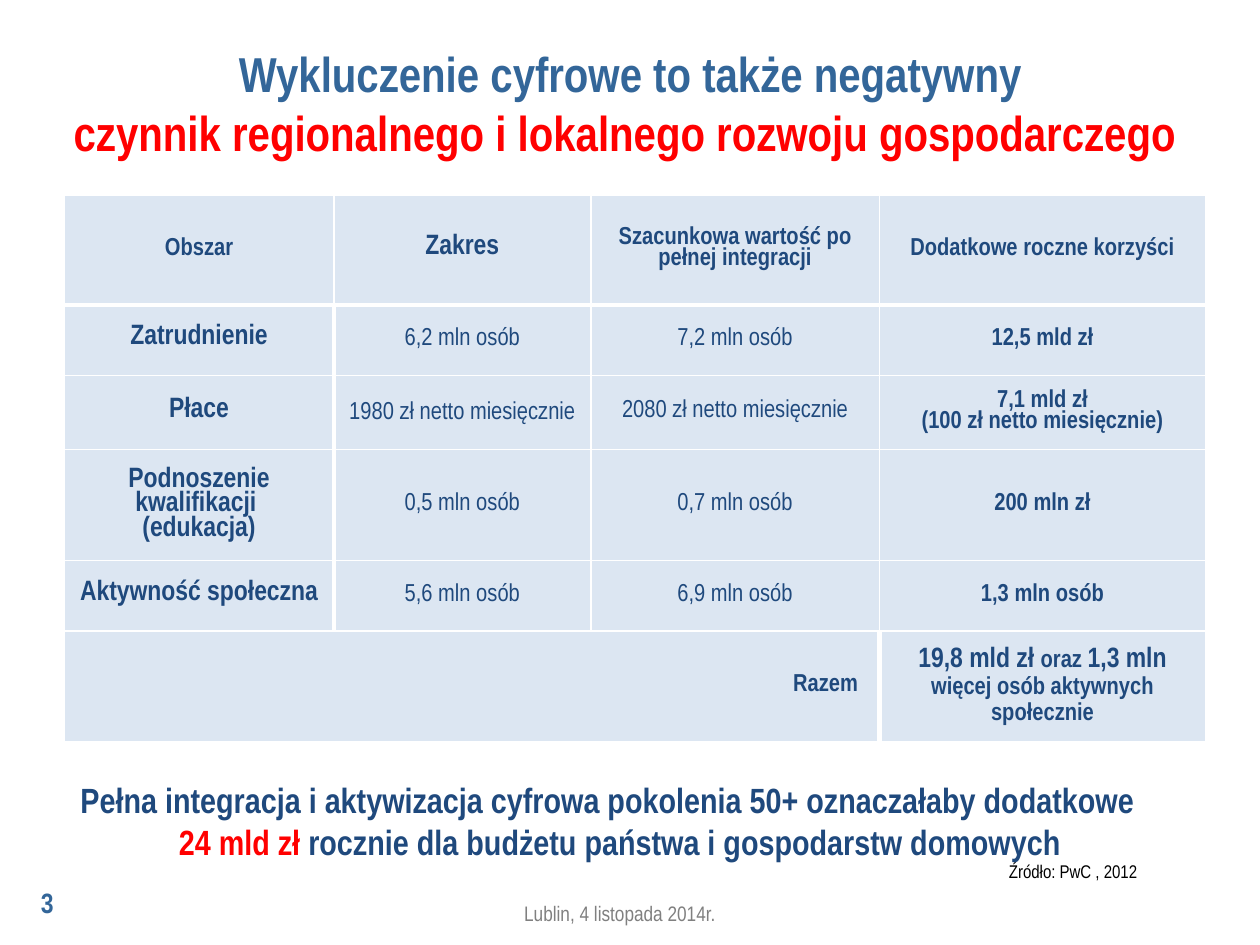
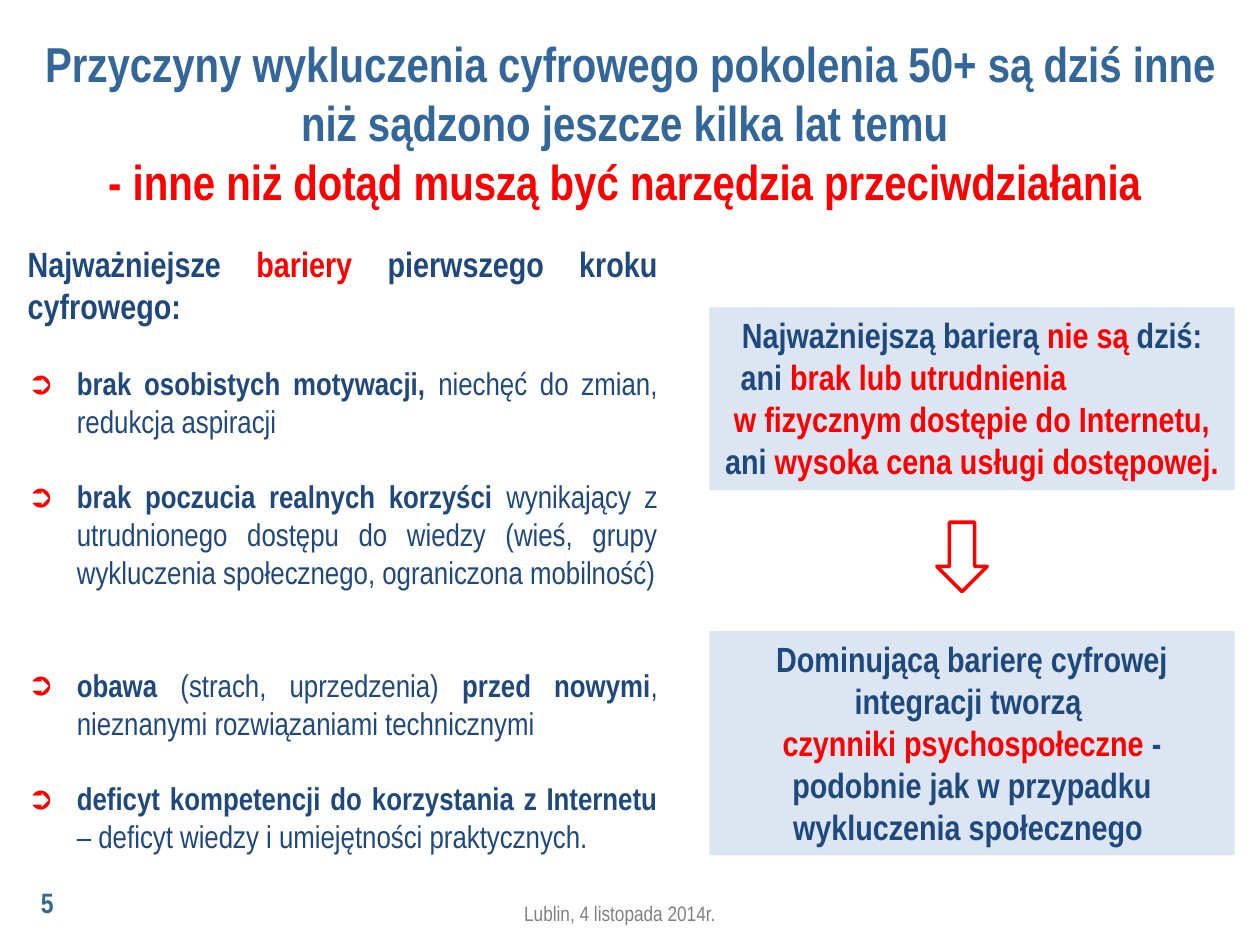
from dataclasses import dataclass
from lxml.etree import SubElement as Sub
from pptx import Presentation
from pptx.dml.color import RGBColor as Rgb
from pptx.enum.shapes import MSO_SHAPE as Shape
from pptx.enum.text import MSO_ANCHOR as Anchor, MSO_AUTO_SIZE as Auto, PP_ALIGN as Align
from pptx.oxml.ns import qn
from pptx.util import Pt

SCALE = 9144


@dataclass(frozen=True)
class Theme:
    """Colours, font and type sizes."""
    face: str = "Arial Narrow"
    blue: str = "336699"
    navy: str = "1F497D"
    red: str = "FF0000"
    pale: str = "DCE6F2"
    grey: str = "808080"
    black: str = "000000"
    white: str = "FFFFFF"
    title: float = 28
    lead: float = 20
    body: float = 18
    mark: float = 16
    cell: float = 14
    foot: float = 12
    note: float = 10.5


T = Theme()
RED = {"color": T.red}
BIG = {"size": T.mark}
THIN = {"bold": False}


def px(*vals):
    """Turn px into EMU."""
    return [val * SCALE for val in vals]


def put(obj, vals):
    """Set attributes from a dict."""
    for key, val in vals.items():
        setattr(obj, key, val)


def para(*runs, **look):
    """Pair runs with a paragraph look."""
    return runs, look


class Deck:
    """Style and current slide."""

    def __init__(self):
        """Start an empty deck."""
        self.prs = Presentation()
        self.prs.slide_width, self.prs.slide_height = px(1000, 750)
        self.slide = None

    def page(self, num, layout, top, *runs):
        """Add a slide with title, number and footer."""
        self.slide = self.prs.slides.add_slide(self.prs.slide_layouts[layout])
        self.hold(self.slide.shapes.title, (0, top, 1000, 84), [para(*runs)],
                  size=T.title, color=T.blue, bold=True)
        self.text((130, 710, 724, 30), [para("Lublin, 4 listopada 2014r.")],
                  size=T.foot, color=T.grey)
        self.text((0, 682, 75, 68), [para(num)], Anchor.MIDDLE,
                  size=T.mark, color=T.blue, bold=True)

    def style(self, font, size, color, bold=False):
        """Format one font."""
        put(font, {"name": T.face, "size": Pt(size), "bold": bold})
        font.color.rgb = Rgb.from_string(color)

    def lines(self, frame, paras, **base):
        """Set paragraphs of styled runs."""
        for num, (runs, look) in enumerate(paras):
            line = frame.add_paragraph() if num else frame.paragraphs[0]
            look = {"alignment": Align.CENTER, "space_before": Pt(0)} | look
            mark, left = look.pop("mark", None), look.pop("left", 0)
            put(line, look)
            self.lead(line, left, mark)
            for run in runs:
                words, own = (run, {}) if isinstance(run, str) else run
                for part, bit in enumerate(words.split("\n")):
                    if part:
                        line.add_line_break()
                    if bit:
                        piece = line.add_run()
                        piece.text = bit
                        self.style(piece.font, **(base | own))

    def lead(self, line, left, mark):
        """Set indent and bullet."""
        props = line._p.get_or_add_pPr()
        edge = px(left)[0]
        props.set("marL", str(edge))
        props.set("indent", str(-edge if mark else 0))
        if mark:
            Sub(Sub(props, qn("a:buClr")), qn("a:srgbClr"), val=T.red)
            Sub(props, qn("a:buChar"), char=mark)
        else:
            Sub(props, qn("a:buNone"))

    def hold(self, shape, area, paras, **base):
        """Move and fill a placeholder."""
        put(shape, dict(zip(("left", "top", "width", "height"), px(*area))))
        put(shape.text_frame, {"auto_size": Auto.NONE, "word_wrap": True,
                               "vertical_anchor": Anchor.MIDDLE})
        self.lines(shape.text_frame, paras, **base)

    def list(self, area, paras, **base):
        """Fill the body placeholder."""
        self.hold(self.slide.placeholders[1], area, paras, **base)

    def text(self, area, paras, anchor=Anchor.TOP, wrap=True, **base):
        """Add a text box."""
        frame = self.slide.shapes.add_textbox(*px(*area)).text_frame
        put(frame, {"word_wrap": wrap, "vertical_anchor": anchor})
        self.lines(frame, paras, **base)

    def shape(self, kind, area, fill, line=None):
        """Add a flat preset shape."""
        item = self.slide.shapes.add_shape(kind, *px(*area))
        item.shadow.inherit = False
        item.fill.solid()
        item.fill.fore_color.rgb = Rgb.from_string(fill)
        if line:
            item.line.color.rgb = Rgb.from_string(line)
            item.line.width = Pt(2)
        else:
            item.line.fill.background()
        return item

    def panel(self, area, paras):
        """Add a pale panel with bold text."""
        frame = self.shape(Shape.RECTANGLE, area, T.pale).text_frame
        put(frame, {"word_wrap": True, "vertical_anchor": Anchor.TOP})
        self.lines(frame, paras, size=T.lead, color=T.navy, bold=True)

    def table(self, area, cols, rows, data):
        """Add a table whose last row sums up the rest."""
        grid = self.slide.shapes.add_table(len(rows), len(cols), *px(*area)).table
        put(grid, {"first_row": False, "horz_banding": False})
        for col, wide in zip(grid.columns, px(*cols)):
            col.width = wide
        for row, high in zip(grid.rows, px(*rows)):
            row.height = high
        last, end = len(rows) - 1, len(cols) - 1
        grid.cell(last, 0).merge(grid.cell(last, end - 1))
        for r, line in enumerate(data):
            split = end if r == last else 1
            for c, paras in enumerate(line):
                cell = grid.cell(r, c)
                thick = {"L": r and c == split, "R": r and c in (0, split - 1),
                         "T": r == 1, "B": r == 0}
                self.cell(cell, paras, thick, not r or c in (0, end) or r == last)
        grid.cell(last, 0).margin_right = px(17)[0]

    def cell(self, cell, paras, thick, bold):
        """Format one table cell."""
        side, flat = px(7, 0)
        put(cell, {"vertical_anchor": Anchor.MIDDLE, "margin_left": side,
                   "margin_right": side, "margin_top": flat, "margin_bottom": flat})
        cell.fill.solid()
        cell.fill.fore_color.rgb = Rgb.from_string(T.pale)
        props = cell._tc.get_or_add_tcPr()
        for num, (key, wide) in enumerate(thick.items()):
            edge = Sub(props, qn(f"a:ln{key}"), w=str(Pt(3 if wide else 1)))
            Sub(Sub(edge, qn("a:solidFill")), qn("a:srgbClr"), val=T.white)
            props.insert(num, edge)
        self.lines(cell.text_frame, paras, size=T.cell, color=T.navy, bold=bold)


def cost(deck):
    """Build the table of economic effects."""
    def one(words, gap=12, **own):
        """Make a cell of one paragraph."""
        return [para((words, own), line_spacing=Pt(gap))]

    deck.page("3", 5, 39, "Wykluczenie cyfrowe to także negatywny\n",
              ("czynnik regionalnego i lokalnego rozwoju gospodarczego ", RED))
    data = [
        [one("Obszar"), one("Zakres", **BIG),
         one("Szacunkowa wartość po pełnej integracji"), one("Dodatkowe roczne korzyści")],
        [one("Zatrudnienie", **BIG), one("6,2 mln osób"), one("7,2 mln osób"),
         one("12,5 mld zł")],
        [one("Płace", **BIG), one("1980 zł netto miesięcznie", 14),
         one("2080 zł netto miesięcznie"),
         one("7,1 mld zł") + one("(100 zł netto miesięcznie)")],
        [one("Podnoszenie kwalifikacji ", 14, **BIG) + one("(edukacja)", 14, **BIG),
         one("0,5 mln osób"), one("0,7 mln osób"), one("200 mln zł")],
        [one("Aktywność społeczna", **BIG), one("5,6 mln osób"), one("6,9 mln osób"),
         one("1,3 mln osób")],
        [[para("Razem", alignment=Align.RIGHT, line_spacing=Pt(12))], [], [],
         [para(("19,8 mld zł ", BIG), "oraz ", ("1,3 mln ", BIG),
               "więcej osób aktywnych społecznie", line_spacing=Pt(15))]],
    ]
    deck.table((51, 155, 906, 433), (214, 204, 229, 259), (87, 56, 59, 88, 56, 88), data)
    deck.text((791, 678, 123, 28), [para("Źródło: PwC , 2012", alignment=Align.LEFT)],
              wrap=False, size=T.note, color=T.black)
    deck.text((43, 613, 898, 77), [
        para("Pełna integracja i aktywizacja cyfrowa pokolenia 50+ oznaczałaby dodatkowe",
             alignment=Align.LEFT, left=11),
        para(("24 mld zł ", RED), "rocznie dla budżetu państwa i gospodarstw domowych"),
    ], size=T.lead, color=T.navy, bold=True)


def cause(deck):
    """Build the list of barriers."""
    def item(*runs, gap=21.5):
        """Make one justified bullet."""
        return para(*runs, alignment=Align.JUSTIFY, space_before=Pt(gap), left=39, mark="➲")

    deck.page("5", 1, 55, "Przyczyny wykluczenia cyfrowego pokolenia 50+ są dziś inne "
              "niż sądzono jeszcze kilka lat temu \n",
              ("- inne niż dotąd muszą być narzędzia przeciwdziałania ", RED))
    head = {"size": T.lead}
    deck.list((12, 200, 520, 471), [
        para(("Najważniejsze ", head), ("bariery ", head | RED),
             ("pierwszego kroku cyfrowego:", head), alignment=Align.JUSTIFY),
        item("brak osobistych motywacji, ", ("niechęć do zmian, redukcja aspiracji", THIN)),
        item("brak poczucia realnych korzyści ",
             ("wynikający z utrudnionego dostępu do wiedzy (wieś, grupy wykluczenia "
              "społecznego, ograniczona mobilność)", THIN)),
        item("obawa ", ("(strach, uprzedzenia)", THIN), " przed nowymi",
             (", nieznanymi rozwiązaniami technicznymi", THIN), gap=43),
        item("deficyt kompetencji do korzystania z Internetu ",
             ("– deficyt wiedzy i umiejętności praktycznych.", THIN)),
    ], size=T.body, color=T.navy, bold=True)
    deck.panel((563, 244, 417, 145), [
        para("Najważniejszą barierą ", ("nie są ", RED), "dziś:"),
        para("ani ", ("brak lub utrudnienia", RED), alignment=Align.LEFT, left=15),
        para(("w fizycznym dostępie do Internetu,", RED)),
        para("ani ", ("wysoka cena usługi dostępowej.", RED)),
    ])
    deck.panel((563, 501, 417, 178), [
        para("Dominującą barierę cyfrowej integracji tworzą "),
        para(("czynniki psychospołeczne ", RED),
             "- podobnie jak w przypadku wykluczenia społecznego "),
    ])
    deck.shape(Shape.RIGHT_ARROW, (736, 422, 55, 40), T.white, T.red).rotation = 90


def main():
    """Build and save the deck."""
    deck = Deck()
    cost(deck)
    cause(deck)
    deck.prs.save("out.pptx")


if __name__ == "__main__":
    main()
